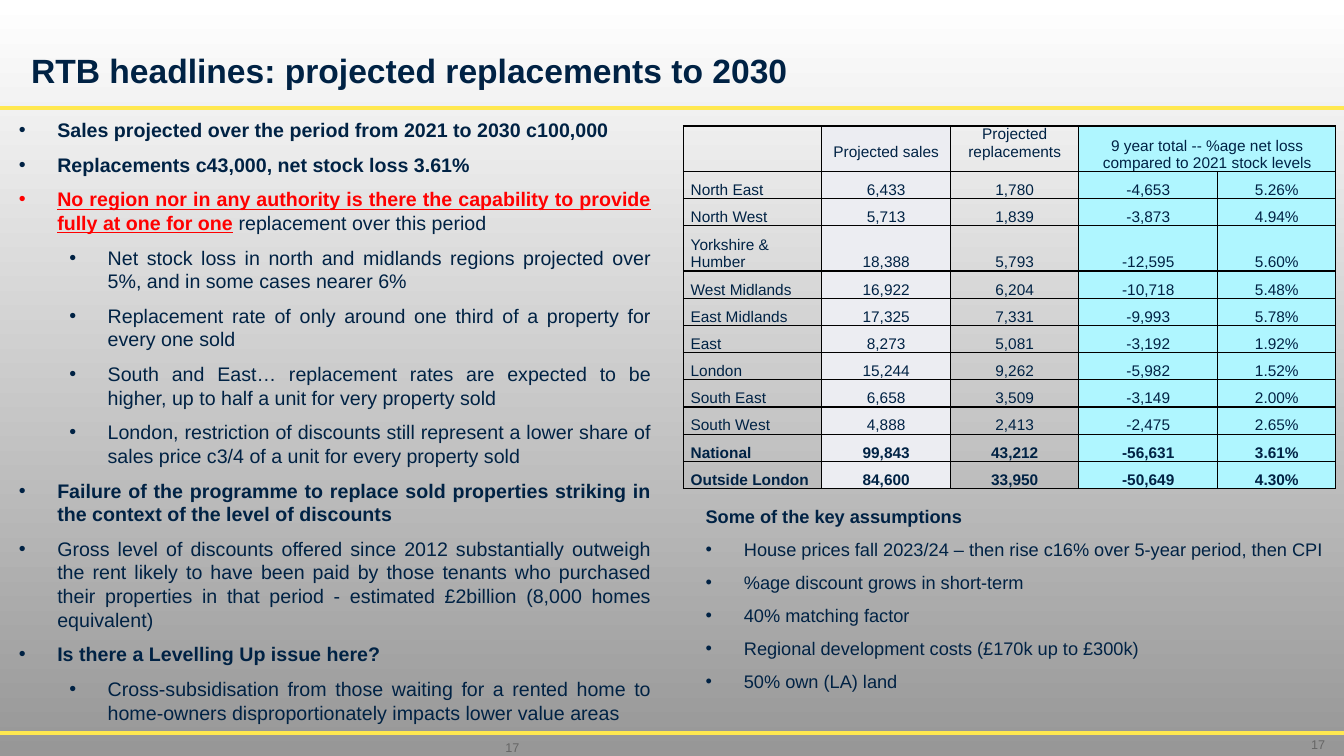
from lxml.etree import SubElement
from pptx import Presentation
from pptx.dml.color import RGBColor
from pptx.enum.shapes import MSO_CONNECTOR as Connector
from pptx.enum.text import MSO_ANCHOR as Anchor, PP_ALIGN as Align
from pptx.oxml import parse_xml
from pptx.oxml.ns import nsdecls, qn
from pptx.util import Inches, Pt

NAVY, RED, GREY, YELLOW = "002244", "FF0000", "666666", "FFE850"
PALE, CYAN = "ECEDF2", "AFF6FF"


def paint(color, value):
    color.rgb = RGBColor.from_string(value)


def write(para, spans, size, align=Align.LEFT, color=NAVY):
    para.alignment = align
    for text, bold, *accent in spans:
        span = para.add_run()
        span.text = text
        span.font.name = "Arial"
        span.font.size = Pt(size)
        span.font.bold = bold
        span.font.underline = bool(accent)
        paint(span.font.color, accent[0] if accent else color)


deck = Presentation()
deck.slide_width, deck.slide_height = Inches(13.33), Inches(7.5)
page = deck.slides.add_slide(deck.slide_layouts[6])

backdrop = page.background.fill
backdrop.gradient()
backdrop.gradient_angle = 270
for stop, position, shade in zip(backdrop.gradient_stops, (0, 1), ("FFFFFF", "979797")):
    stop.position = position
    paint(stop.color, shade)

for height in (1.07, 7.27):
    rule = page.shapes.add_connector(
        Connector.STRAIGHT, 0, Inches(height), deck.slide_width, Inches(height))
    rule.line.width = Pt(3)
    paint(rule.line.color, YELLOW)
    SubElement(rule._element.spPr, qn("a:effectLst"))

labels = [
    ((0.21, 0.45, 12.24, 0.5), "RTB headlines: projected replacements to 2030",
     24, True, Align.LEFT, NAVY, Anchor.BOTTOM),
    ((12.73, 7.27, 0.51, 0.23), "17", 9, False, Align.RIGHT, GREY, Anchor.MIDDLE),
    ((4.74, 7.3, 0.51, 0.23), "17", 9, False, Align.RIGHT, GREY, Anchor.MIDDLE),
]
for place, text, size, bold, align, color, anchor in labels:
    frame = page.shapes.add_textbox(*map(Inches, place)).text_frame
    frame.word_wrap = True
    frame.vertical_anchor = anchor
    frame.paragraphs[0].line_spacing = 0.9 if size == 24 else 1.0
    write(frame.paragraphs[0], [(text, bold)], size, align, color)

headlines = [
    (0, [("Sales projected over the period from 2021 to 2030 c100,000", True)]),
    (0, [("Replacements c43,000, net stock loss 3.61%", True)]),
    (0, [("No region nor in any authority is there the capability to provide "
          "fully at one for one", True, RED),
         (" ", True), ("replacement over this period", False)]),
    (1, [("Net stock loss in north and midlands regions projected over 5%, "
          "and in some cases nearer 6%", False)]),
    (1, [("Replacement rate of only around one third of a property for "
          "every one sold", False)]),
    (1, [("South and East… replacement rates are expected to be higher, "
          "up to half a unit for very property sold", False)]),
    (1, [("London, restriction of discounts still represent a lower share of "
          "sales price c3/4 of a unit for every property sold", False)]),
    (0, [("Failure of the programme to replace sold properties striking in "
          "the context of the level of discounts", True)]),
    (0, [("Gross level of discounts offered since 2012 substantially outweigh "
          "the rent likely to have been paid by those tenants who purchased "
          "their properties in that period - estimated £2billion "
          "(8,000 homes equivalent)", False)]),
    (0, [("Is there a Levelling Up issue here?", True)]),
    (1, [("Cross-subsidisation from those waiting for a rented home to "
          "home-owners disproportionately impacts lower value areas", False)]),
]
assumptions = [
    (None, [("Some of the key assumptions", True)]),
    (0, [("House prices fall 2023/24 – then rise c16% over 5-year period, then CPI", False)]),
    (0, [("%age discount grows in short-term", False)]),
    (0, [("40% matching factor", False)]),
    (0, [("Regional development costs (£170k up to £300k)", False)]),
    (0, [("50% own (LA) land", False)]),
]
for place, size, points in (((0.09, 1.12, 6.47, 6.17), 14, headlines),
                            ((6.9, 4.96, 6.34, 2.19), 13, assumptions)):
    frame = page.shapes.add_textbox(*map(Inches, place)).text_frame
    frame.word_wrap = True
    for index, (level, spans) in enumerate(points):
        para = frame.add_paragraph() if index else frame.paragraphs[0]
        para.space_after = Pt(8)
        if level is not None:
            para.level = level
            layout = para._p.get_or_add_pPr()
            layout.set("marL", str(Inches(0.38 + 0.5 * level)))
            layout.set("indent", str(Inches(-0.38)))
            SubElement(layout, qn("a:buFont"), typeface="Arial")
            SubElement(layout, qn("a:buChar"), char="•")
        write(para, spans, size, Align.JUSTIFY)

rows = [
    ("", "Projected sales", "Projected replacements",
     "9 year total -- %age net loss compared to 2021 stock levels", ""),
    ("North East", "6,433", "1,780", "-4,653", "5.26%"),
    ("North West", "5,713", "1,839", "-3,873", "4.94%"),
    ("Yorkshire & Humber", "18,388", "5,793", "-12,595", "5.60%"),
    ("West Midlands", "16,922", "6,204", "-10,718", "5.48%"),
    ("East Midlands", "17,325", "7,331", "-9,993", "5.78%"),
    ("East", "8,273", "5,081", "-3,192", "1.92%"),
    ("London", "15,244", "9,262", "-5,982", "1.52%"),
    ("South East", "6,658", "3,509", "-3,149", "2.00%"),
    ("South West", "4,888", "2,413", "-2,475", "2.65%"),
    ("National", "99,843", "43,212", "-56,631", "3.61%"),
    ("Outside London", "84,600", "33,950", "-50,649", "4.30%"),
]
widths = (1.37, 1.28, 1.27, 1.38, 1.17)
fills = (None, PALE, None, CYAN, CYAN)
table = page.shapes.add_table(
    len(rows), len(widths), *map(Inches, (6.78, 1.25, 6.47, 3.6))).table
table.first_row = table.horz_banding = False
table._tbl.tblPr.find(qn("a:tableStyleId")).text = "{2D5ABB26-0587-4C30-8999-92F81FD0307C}"
for column, width in zip(table.columns, widths):
    column.width = Inches(width)
for r, values in enumerate(rows):
    table.rows[r].height = Inches(0.45 if r in (0, 3) else 0.27)
    for c, value in enumerate(values):
        cell = table.cell(r, c)
        cell.margin_left = cell.margin_right = Inches(0.07)
        cell.margin_top = Inches(0.17 if (r, c) == (0, 1) else 0)
        cell.margin_bottom = 0
        cell.vertical_anchor = Anchor.TOP if r == 0 and c < 3 else Anchor.BOTTOM
        if fills[c]:
            cell.fill.solid()
            paint(cell.fill.fore_color, fills[c])
        else:
            cell.fill.background()
        for order, side in enumerate(("lnL", "lnR", "lnT", "lnB")):
            cell._tc.get_or_add_tcPr().insert(order, parse_xml(
                f'<a:{side} {nsdecls("a")} w="{Pt(1)}"><a:solidFill>'
                f'<a:srgbClr val="000000"/></a:solidFill></a:{side}>'))
        if value:
            write(cell.text_frame.paragraphs[0], [(value, r >= 10)], 11,
                  Align.CENTER if c else Align.LEFT)
table.cell(0, 3).merge(table.cell(0, 4))

deck.save("out.pptx")
